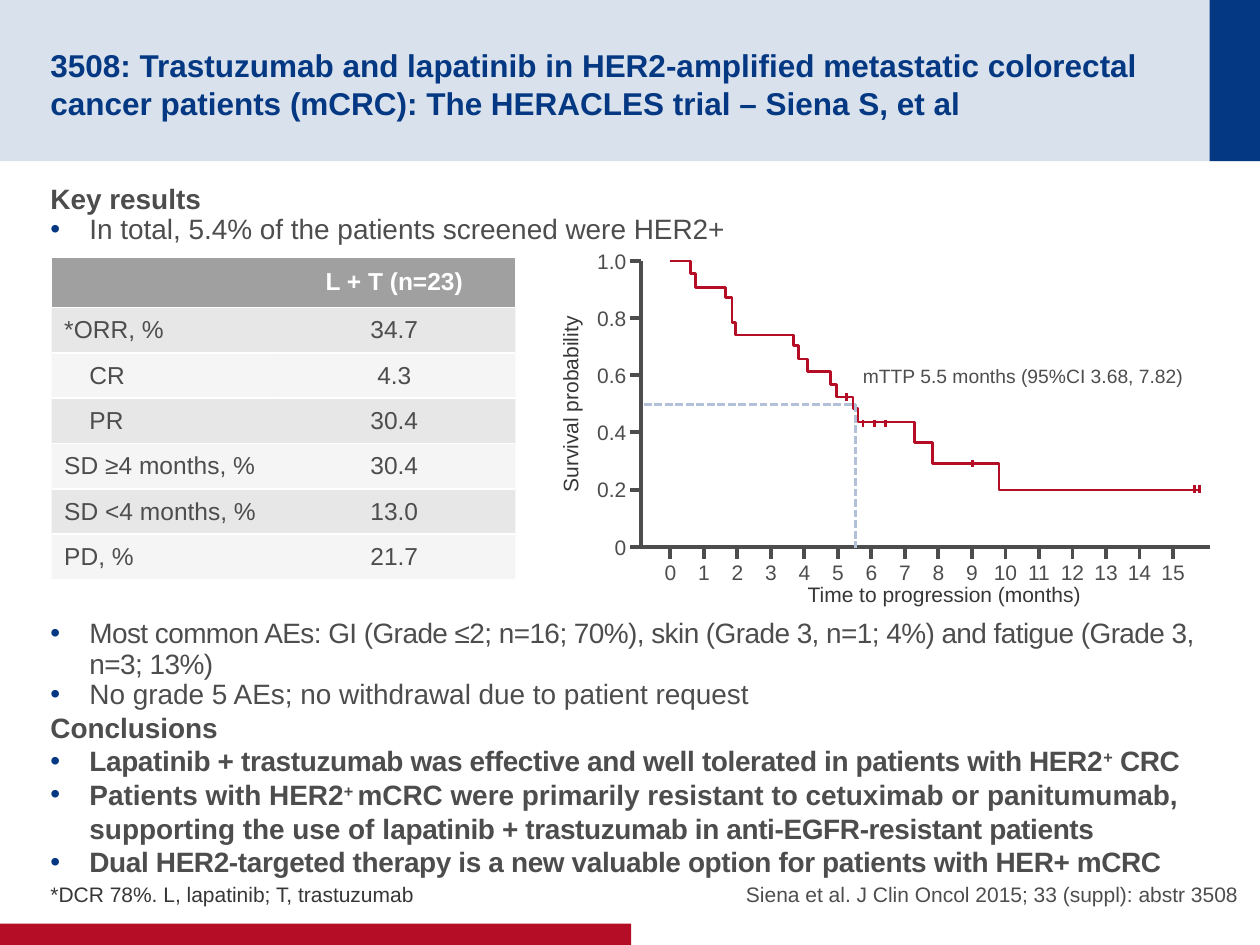
import pptx
import pptx.util
import pptx.dml.color
import pptx.enum.dml
import pptx.enum.shapes
import pptx.enum.text
import pptx.oxml
import pptx.oxml.ns
from pptx.util import Inches

COLORS = {"navy": "043882", "red": "B60D27", "text": "4D4D4D", "dark": "363636",
          "grey": "A0A0A0", "guide": "B2C0D8", "white": "FFFFFF"}
ALIGN = pptx.enum.text.PP_ALIGN
ANCHOR = pptx.enum.text.MSO_ANCHOR
NS = pptx.oxml.ns.nsdecls("a")

# Chart geometry in inches
AXIS_X, AXIS_TOP, AXIS_Y, AXIS_RIGHT = 5.09, 2.07, 4.34, 9.6
MONTH_0, MONTH_STEP = 5.32, 0.266
# Survival curve: at each x the curve drops to y
DROPS = [(5.48, 2.17), (5.52, 2.28), (5.76, 2.36), (5.81, 2.56), (5.84, 2.66),
         (6.3, 2.74), (6.34, 2.85), (6.41, 2.95), (6.59, 3.05), (6.64, 3.15),
         (6.77, 3.24), (6.81, 3.35), (7.26, 3.51), (7.4, 3.68), (7.93, 3.89)]
CURVE_END = 9.51
CENSORED = [(6.72, 3.15), (6.85, 3.36), (6.94, 3.36), (7.03, 3.36),
            (7.72, 3.68), (9.48, 3.88), (9.52, 3.88)]

RESPONSES = [("*ORR, %", "34.7"), ("CR", "4.3"), ("PR", "30.4"),
             ("SD ≥4 months, %", "30.4"), ("SD <4 months, %", "13.0"), ("PD, %", "21.7")]


def rgb(name):
    return pptx.dml.color.RGBColor.from_string(COLORS[name])


def fill_solid(fill, color, alpha=None):
    fill.solid()
    fill.fore_color.rgb = rgb(color)
    if alpha is not None:
        clr = fill._xPr.find(".//" + pptx.oxml.ns.qn("a:srgbClr"))
        clr.append(pptx.oxml.parse_xml(f'<a:alpha {NS} val="{alpha * 1000}"/>'))


def add_band(slide, left, top, width, height, color, alpha=None):
    band = slide.shapes.add_shape(pptx.enum.shapes.MSO_SHAPE.RECTANGLE, Inches(left),
                                  Inches(top), Inches(width), Inches(height))
    band.shadow.inherit = False
    fill_solid(band.fill, color, alpha)
    band.line.fill.background()


def add_run(paragraph, text, size, color="text", bold=False, spacing=0, raised=0):
    run = paragraph.add_run()
    run.text = text
    run.font.name = "Arial"
    run.font.size = pptx.util.Pt(size)
    run.font.bold = bold
    run.font.color.rgb = rgb(color)
    if spacing:
        run.font._element.set("spc", str(round(spacing * 100)))
    if raised:
        run.font._element.set("baseline", str(raised * 1000))


def add_frame(slide, left, top, width, height, insets=(0.1, 0.05, 0.1, 0.05),
              anchor=ANCHOR.TOP, wrap=True):
    box = slide.shapes.add_textbox(Inches(left), Inches(top), Inches(width), Inches(height))
    frame = box.text_frame
    frame.word_wrap = wrap
    frame.vertical_anchor = anchor
    (frame.margin_left, frame.margin_top,
     frame.margin_right, frame.margin_bottom) = map(Inches, insets)
    return box


def add_label(slide, text, left, top, width, height, size=12, color="text", bold=False,
              align=ALIGN.LEFT, **frame_options):
    label = add_frame(slide, left, top, width, height, **frame_options)
    paragraph = label.text_frame.paragraphs[0]
    paragraph.alignment = align
    add_run(paragraph, text, size, color, bold)
    return label


def add_bullet(paragraph):
    props = paragraph._p.get_or_add_pPr()
    props.set("marL", str(Inches(0.31)))
    props.set("indent", str(-Inches(0.31)))
    for xml in (f'<a:buClr {NS}><a:srgbClr val="{COLORS["navy"]}"/></a:buClr>',
                f'<a:buFont {NS} typeface="Arial"/>', f'<a:buChar {NS} char="•"/>'):
        props.append(pptx.oxml.parse_xml(xml))


def add_body(slide, top, height, lines):
    """Each line is (is_bullet, line_spacing, bold, [(text, spacing, raised), ...])."""
    frame = add_frame(slide, 0.4, top, 9.19, height, insets=(0, 0.05, 0.1, 0.05)).text_frame
    for i, (is_bullet, line_spacing, bold, runs) in enumerate(lines):
        paragraph = frame.add_paragraph() if i else frame.paragraphs[0]
        paragraph.line_spacing = line_spacing
        if is_bullet:
            add_bullet(paragraph)
        for text, spacing, raised in runs:
            add_run(paragraph, text, 16, bold=bold, spacing=spacing, raised=raised)


def add_line(slide, x1, y1, x2, y2, color, width, dashed=False):
    line = slide.shapes.add_connector(pptx.enum.shapes.MSO_CONNECTOR.STRAIGHT,
                                      Inches(x1), Inches(y1), Inches(x2), Inches(y2))
    line.line.color.rgb = rgb(color)
    line.line.width = pptx.util.Pt(width)
    if dashed:
        line.line.dash_style = pptx.enum.dml.MSO_LINE.SQUARE_DOT
    line._element.spPr.append(pptx.oxml.parse_xml(f"<a:effectLst {NS}/>"))


def add_polyline(slide, points, color, width):
    points = [(Inches(x), Inches(y)) for x, y in points]
    builder = slide.shapes.build_freeform(*points[0])
    builder.add_line_segments(points[1:], close=False)
    outline = builder.convert_to_shape()
    outline.shadow.inherit = False
    outline.fill.background()
    outline.line.color.rgb = rgb(color)
    outline.line.width = pptx.util.Pt(width)


def set_borders(cell):
    """White rules above and below, none at the sides."""
    props = cell._tc.get_or_add_tcPr()
    white = f'<a:solidFill><a:srgbClr val="{COLORS["white"]}"/></a:solidFill>'
    for i, (side, paint) in enumerate(zip("LRTB", ["<a:noFill/>"] * 2 + [white] * 2)):
        props.insert(i, pptx.oxml.parse_xml(f'<a:ln{side} {NS} w="12700">{paint}</a:ln{side}>'))


def add_response_table(slide):
    rows = [("", "L + T (n=23)")] + RESPONSES
    table = slide.shapes.add_table(len(rows), 2, Inches(0.41), Inches(2.04),
                                   Inches(3.68), Inches(2.52)).table
    table.first_row = table.horz_banding = False
    table.columns[0].width, table.columns[1].width = Inches(1.76), Inches(1.92)
    for r, row in enumerate(rows):
        for c, text in enumerate(row):
            cell = table.cell(r, c)
            cell.vertical_anchor = ANCHOR.MIDDLE
            fill_solid(cell.fill, "grey", None if r == 0 else 25 if r % 2 else 10)
            set_borders(cell)
            paragraph = cell.text_frame.paragraphs[0]
            if c:
                paragraph.alignment = ALIGN.CENTER
            if text in ("CR", "PR"):
                paragraph._p.get_or_add_pPr().set("marL", str(Inches(0.2)))
            if text:
                add_run(paragraph, text, 14, "text" if r else "white", bold=r == 0)


def add_survival_plot(slide):
    # Axes, ticks and scale labels
    add_polyline(slide, [(AXIS_X, AXIS_TOP), (AXIS_X, AXIS_Y), (AXIS_RIGHT, AXIS_Y)],
                 "text", 2.25)
    for i, text in enumerate(["1.0", "0.8", "0.6", "0.4", "0.2", "0"]):
        y = AXIS_TOP + i * (AXIS_Y - AXIS_TOP) / 5
        add_line(slide, AXIS_X - 0.09, y, AXIS_X, y, "text", 2.25)
        add_label(slide, text, 4.63, y - 0.15, 0.44, 0.3, align=ALIGN.RIGHT,
                  anchor=ANCHOR.MIDDLE, wrap=False)
    for month in range(16):
        x = MONTH_0 + month * MONTH_STEP
        add_line(slide, x, AXIS_Y, x, AXIS_Y + 0.1, "text", 2.25)
        width = 0.29 if month < 10 else 0.39
        add_label(slide, str(month), x - width / 2, 4.39, width, 0.3, align=ALIGN.CENTER,
                  anchor=ANCHOR.MIDDLE, wrap=False)
    axis_title = {"color": "dark", "align": ALIGN.CENTER, "wrap": False}
    add_label(slide, "Survival probability", 3.72, 3.06, 1.61, 0.3, **axis_title).rotation = 270
    add_label(slide, "Time to progression (months)", 6.3, 4.57, 2.39, 0.3, **axis_title)

    # Step curve with censoring marks
    curve = [(MONTH_0, AXIS_TOP)]
    for x, y in DROPS:
        curve += [(x, curve[-1][1]), (x, y)]
    curve.append((CURVE_END, curve[-1][1]))
    add_polyline(slide, curve, "red", 1.5)
    for x, y in CENSORED:
        add_line(slide, x, y - 0.03, x, y + 0.03, "red", 1.5)

    # Median guide
    add_line(slide, 5.11, 3.21, 6.79, 3.21, "guide", 1.5, dashed=True)
    add_line(slide, 6.79, 3.21, 6.79, 4.35, "guide", 1.5, dashed=True)
    add_label(slide, "mTTP 5.5 months (95%CI 3.68, 7.82)", 6.75, 2.84, 2.8, 0.29,
              size=11, wrap=False)


def main():
    deck = pptx.Presentation()
    deck.slide_width, deck.slide_height = Inches(10), Inches(7.5)
    slide = deck.slides.add_slide(deck.slide_layouts[6])

    # Header and footer bands
    add_band(slide, 0, 0, 10, 1.28, "navy", alpha=15)
    add_band(slide, 9.6, 0, 0.4, 1.28, "navy")
    add_band(slide, 0, 7.33, 5.01, 0.17, "red")
    add_label(slide, "3508: Trastuzumab and lapatinib in HER2-amplified metastatic colorectal "
              "cancer patients (mCRC): The HERACLES trial – Siena S, et al",
              0.4, 0.2, 9.01, 0.88, size=18, color="navy", bold=True,
              insets=(0, 0.05, 0, 0), anchor=ANCHOR.MIDDLE)

    # Results and conclusions
    add_body(slide, 1.42, 0.6, [
        (False, 0.9, True, [("Key results", 0, 0)]),
        (True, 0.9, False, [("In total, 5.4% of the patients screened were HER2+", 0, 0)])])
    add_body(slide, 4.87, 2.2, [
        (True, 0.9, False, [("Most common AEs: GI (Grade ≤2; n=16; 70%), skin (Grade 3, n=1; 4%) "
                             "and fatigue (Grade 3, n=3; 13%)", -0.3, 0)]),
        (True, 0.9, False, [("No grade 5 AEs; no withdrawal due to patient request", 0, 0)]),
        (False, 1.0, True, [("Conclusions", 0, 0)]),
        (True, 1.0, True, [("Lapatinib + trastuzumab was effective and well tolerated in "
                            "patients with HER2", -0.2, 0), ("+", -0.2, 30), (" CRC", -0.2, 0)]),
        (True, 1.0, True, [("Patients with HER2", 0, 0), ("+ ", -0.2, 30),
                           ("mCRC were primarily resistant to cetuximab or panitumumab, "
                            "supporting the use of l", 0, 0),
                           ("apatinib + trastuzumab in anti-EGFR-resistant patients", -0.2, 0)]),
        (True, 1.0, True, [("Dual HER2-targeted therapy is a new valuable option for patients "
                            "with HER+ mCRC", -0.2, 0)])])
    add_response_table(slide)
    add_survival_plot(slide)

    # Footnotes
    footnote = {"insets": (0, 0, 0, 0), "anchor": ANCHOR.BOTTOM}
    add_label(slide, "*DCR 78%. L, lapatinib; T, trastuzumab", 0.4, 6.67, 4.52, 0.53,
              color="dark", **footnote)
    add_label(slide, "Siena et al. J Clin Oncol 2015; 33 (suppl): abstr 3508",
              5.08, 6.67, 4.75, 0.53, align=ALIGN.RIGHT, **footnote)

    deck.save("out.pptx")


if __name__ == "__main__":
    main()
